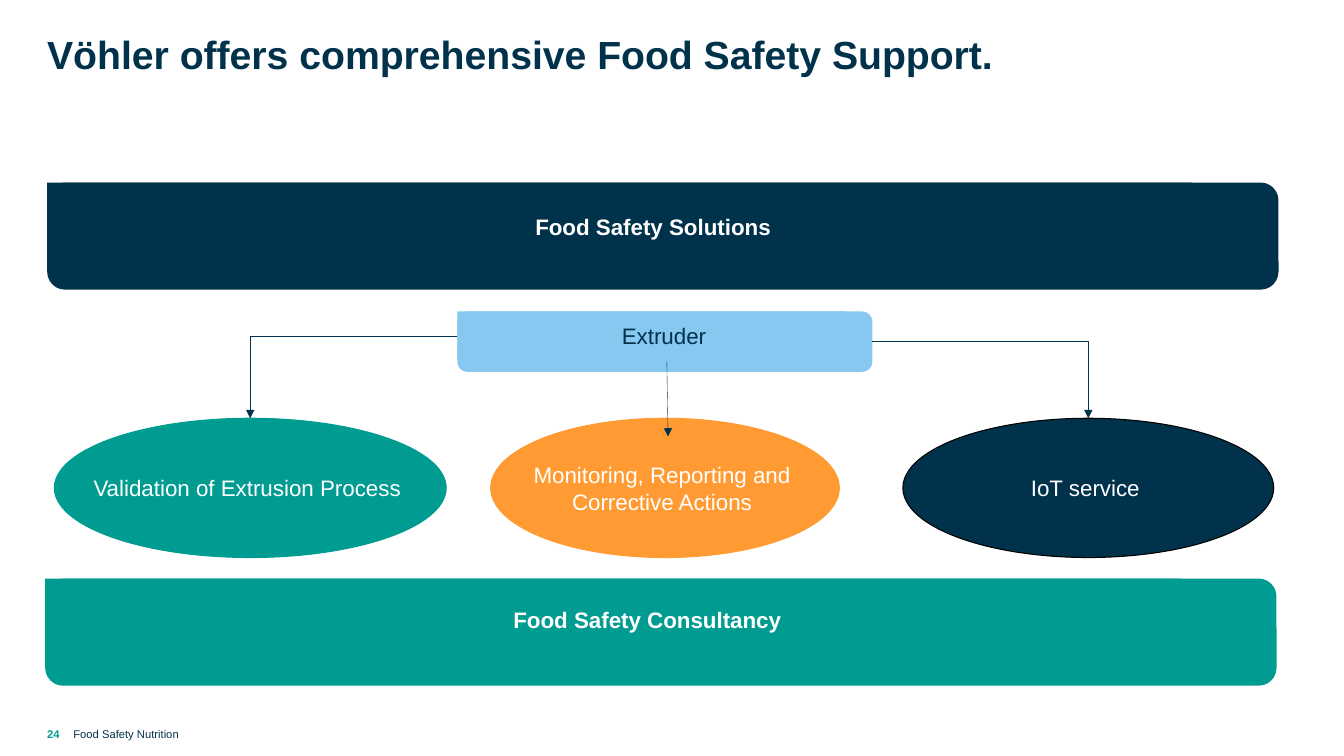
import pptx
import pptx.util
import pptx.dml.color
import pptx.enum.shapes
import pptx.enum.text
import pptx.oxml
import pptx.oxml.ns

COLORS = {"navy": "00324B", "teal": "009B91", "sky": "87C8F0",
          "orange": "FF9B32", "white": "FFFFFF", "black": "000000"}

TITLE = "Vöhler offers comprehensive Food Safety Support."
PAGE_NUMBER = "24"
FOOTER = "Food Safety Nutrition"

PANELS = [
    {"text": "Extruder", "box": (11.53, 7.85, 10.46, 1.52), "label": (9.78, 1.22),
     "indent": 0.64, "fill": "sky", "font": "navy", "bold": False},
    {"text": "Food Safety Consultancy", "box": (1.14, 14.58, 31.04, 2.7), "label": (28.63, 2.08),
     "indent": 1.73, "fill": "teal", "font": "white", "bold": True},
    {"text": "Food Safety Solutions", "box": (1.19, 4.6, 31.04, 2.7), "label": (28.85, 2.24),
     "indent": 1.7, "fill": "navy", "font": "white", "bold": True},
]

SERVICE_TOP, SERVICE_HEIGHT = 10.54, 3.51
SERVICES = [
    (["Validation of Extrusion Process"], 1.37, 9.88, "teal", "teal"),
    (["Monitoring, Reporting and", "Corrective Actions"], 12.37, 8.79, "orange", "orange"),
    (["IoT service"], 22.76, 9.35, "navy", "black"),
]

Cm, Pt = pptx.util.Cm, pptx.util.Pt
MSO_SHAPE = pptx.enum.shapes.MSO_SHAPE
MSO_CONNECTOR = pptx.enum.shapes.MSO_CONNECTOR
PP_ALIGN = pptx.enum.text.PP_ALIGN
MSO_ANCHOR = pptx.enum.text.MSO_ANCHOR


def rgb(name):
    return pptx.dml.color.RGBColor.from_string(COLORS[name])


def write(s, lines, size, color, bold=False, align=PP_ALIGN.LEFT,
          anchor=MSO_ANCHOR.MIDDLE, insets=(0, 0, 0, 0), wrap=True):
    tf = s.text_frame
    tf.word_wrap = wrap
    tf.vertical_anchor = anchor
    tf.margin_left, tf.margin_top, tf.margin_right, tf.margin_bottom = map(Cm, insets)
    tf.text = "\n".join(lines)
    for p in tf.paragraphs:
        p.alignment = align
        p.font.name = "Arial"
        p.font.size = Pt(size)
        p.font.bold = bold
        p.font.color.rgb = rgb(color)


def add_text(slide, box, *args, **kwargs):
    write(slide.shapes.add_textbox(*map(Cm, box)), *args, **kwargs)


def add_shape(slide, kind, box, fill, line=None):
    s = slide.shapes.add_shape(kind, *map(Cm, box))
    s.shadow.inherit = False
    s.fill.solid()
    s.fill.fore_color.rgb = rgb(fill)
    if line:
        s.line.color.rgb = rgb(line)
        s.line.width = Pt(0.75)
    else:
        s.line.fill.background()
    return s


def add_panel(slide, panel):
    left, top = panel["box"][:2]
    add_shape(slide, MSO_SHAPE.ROUNDED_RECTANGLE, panel["box"], panel["fill"])
    s = add_shape(slide, MSO_SHAPE.RECTANGLE, (left, top, *panel["label"]), panel["fill"])
    write(s, [panel["text"]], 16, panel["font"], panel["bold"], PP_ALIGN.CENTER,
          insets=(0.25 + panel["indent"], 0.13, 0.25, 0.13))


def add_arrow(slide, kind, *ends):
    c = slide.shapes.add_connector(kind, *map(Cm, ends))
    c.line.color.rgb = rgb("navy")
    c.line.width = Pt(0.25)
    sp_pr = c._element.spPr
    if kind == MSO_CONNECTOR.ELBOW:
        sp_pr.find(pptx.oxml.ns.qn("a:prstGeom")).set("prst", "bentConnector2")
    ns = pptx.oxml.ns.nsdecls("a")
    c.line._get_or_add_ln().append(pptx.oxml.parse_xml(f'<a:tailEnd {ns} type="triangle"/>'))
    sp_pr.append(pptx.oxml.parse_xml(f"<a:effectLst {ns}/>"))


def main():
    prs = pptx.Presentation()
    prs.slide_width, prs.slide_height = Cm(33.88), Cm(19.05)
    slide = prs.slides.add_slide(prs.slide_layouts[6])

    add_text(slide, (1.19, 0.76, 30.99, 2.49), [TITLE], 28, "navy", True, anchor=MSO_ANCHOR.TOP)
    add_text(slide, (1.19, 18.24, 0.65, 0.51), [PAGE_NUMBER], 8, "teal", True)
    add_text(slide, (1.85, 18.24, 22, 0.51), [FOOTER], 8, "navy")

    for panel in PANELS:
        add_panel(slide, panel)

    centers = []
    for lines, left, width, fill, line in SERVICES:
        s = add_shape(slide, MSO_SHAPE.OVAL, (left, SERVICE_TOP, width, SERVICE_HEIGHT), fill, line)
        write(s, lines, 16, "white", align=PP_ALIGN.CENTER,
              insets=(0.25, 0.13, 0.4, 0.13), wrap=False)
        centers.append(left + width / 2)

    left, top, width, height = PANELS[0]["box"]
    add_arrow(slide, MSO_CONNECTOR.ELBOW, left, top + PANELS[0]["label"][1] / 2,
              centers[0], SERVICE_TOP)
    add_arrow(slide, MSO_CONNECTOR.ELBOW, left + width, top + height / 2,
              centers[2], SERVICE_TOP)
    add_arrow(slide, MSO_CONNECTOR.STRAIGHT, 16.81, 9.12, 16.84, 11)

    prs.save("out.pptx")


if __name__ == "__main__":
    main()
